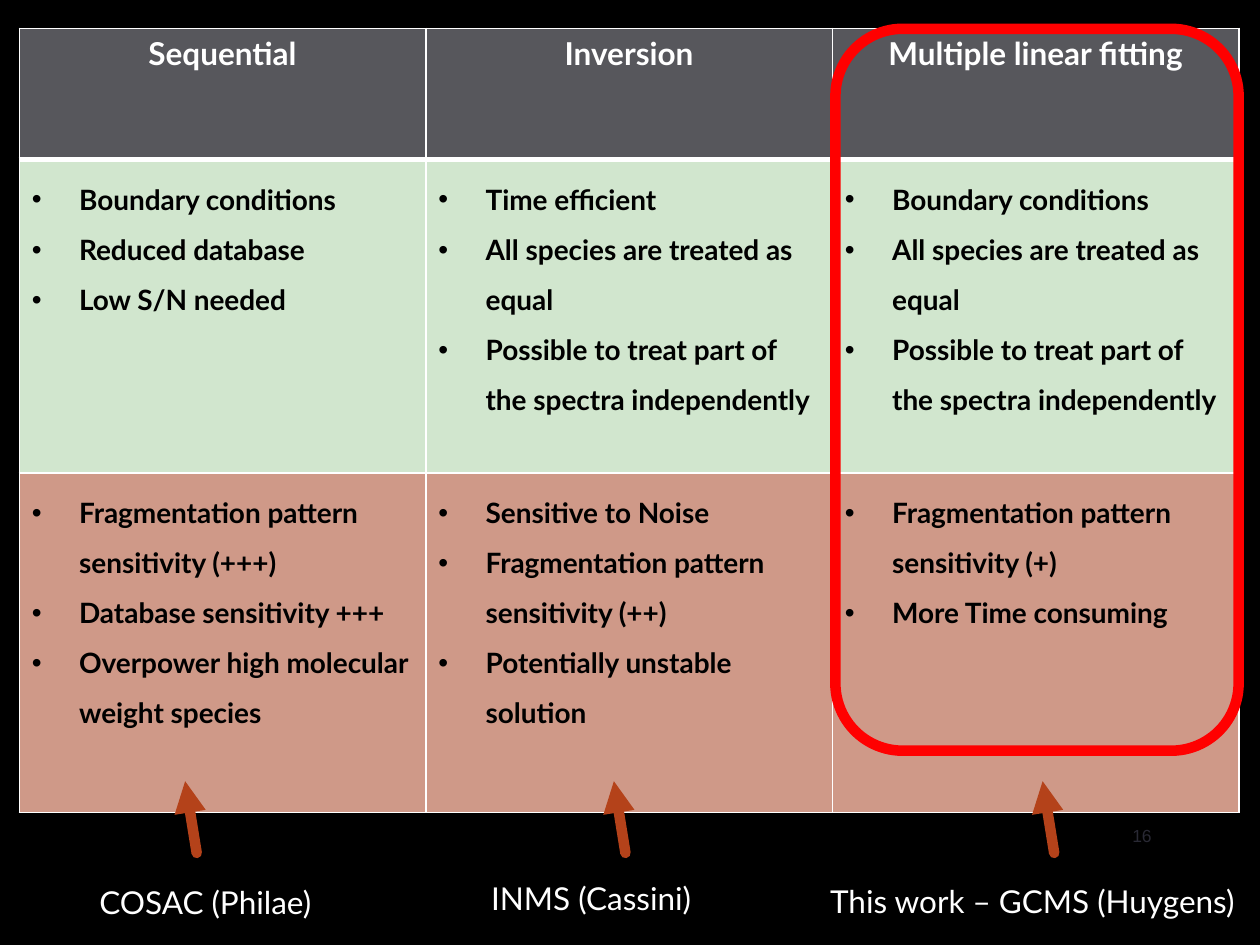
from dataclasses import dataclass
from typing import Any

from lxml import etree
from pptx import Presentation
from pptx.dml import color as c
from pptx.enum import shapes, text
from pptx.oxml import ns
from pptx.util import Pt

WHITE, BLACK, RED, RUST = "FFFFFF", "000000", "FF0000", "B4421A"
HEADER, BENEFIT, DRAWBACK, GREY = "57575C", "D1E6CE", "CF9988", "292934"
TABLE_LEFT, TABLE_TOP, COLUMN_WIDTH = 11, 16.2, 232.3
ROW_HEIGHTS = (75, 179, 194)
ARROW_LEFT, ARROW_STEP, ARROW_TIP, ARROW_END = 105.8, 245, 446.4, 487.4
ARROW_SLANT = 6.6
BULLET_INDENT = 27


@dataclass
class Method:
    name: str
    benefits: list[str]
    drawbacks: list[str]


@dataclass
class Label:
    content: str
    left: float
    top: float
    width: float
    height: float = 29
    size: float = 18
    font: str = "Lato"
    color: str = WHITE
    wrap: bool = False
    alignment: Any = text.PP_ALIGN.LEFT
    anchor: Any = text.MSO_ANCHOR.TOP


TREATMENT = [
    "All species are treated as equal",
    "Possible to treat part of the spectra independently",
]
METHODS = [
    Method(
        "Sequential",
        ["Boundary conditions", "Reduced database", "Low S/N needed"],
        [
            "Fragmentation pattern sensitivity (+++)",
            "Database sensitivity +++",
            "Overpower high molecular weight species",
        ],
    ),
    Method(
        "Inversion",
        ["Time efficient", *TREATMENT],
        [
            "Sensitive to Noise",
            "Fragmentation pattern sensitivity (++)",
            "Potentially unstable solution",
        ],
    ),
    Method(
        "Multiple linear fitting",
        ["Boundary conditions", *TREATMENT],
        ["Fragmentation pattern sensitivity (+)", "More Time consuming"],
    ),
]
LABELS = [
    Label("COSAC (Philae)", 49.7, 501.1, 144),
    Label("INMS (Cassini)", 273.6, 498.6, 136),
    Label("This work – GCMS (Huygens)", 467.3, 500.4, 250),
    Label("16", 620.6, 463, 44.6, size=10, font="Arial", color=GREY, wrap=True,
          alignment=text.PP_ALIGN.RIGHT, anchor=text.MSO_ANCHOR.MIDDLE),
]


def rgb(value: str) -> c.RGBColor:
    return c.RGBColor.from_string(value)


def apply(target: Any, values: dict[str, Any]) -> None:
    for name, value in values.items():
        setattr(target, name, value)


def add_child(parent: Any, tag: str, **attributes: str) -> Any:
    return etree.SubElement(parent, ns.qn(tag), attributes)


def write(paragraph: Any, content: str, size: float, font: str, color: str,
          bold: bool = False) -> None:
    run = paragraph.add_run()
    run.text = content
    apply(run.font, {"size": Pt(size), "name": font, "bold": bold})
    run.font.color.rgb = rgb(color)


def add_bullet(paragraph: Any) -> None:
    properties = paragraph._p.get_or_add_pPr()
    properties.set("marL", str(Pt(BULLET_INDENT)))
    properties.set("indent", str(-Pt(BULLET_INDENT)))
    add_child(properties, "a:buFont", typeface="Arial")
    add_child(properties, "a:buChar", char="•")


def add_borders(cell: Any, top: float, bottom: float) -> None:
    properties = cell._tc.get_or_add_tcPr()
    widths = {"a:lnL": 1, "a:lnR": 1, "a:lnT": top, "a:lnB": bottom}
    for index, (tag, width) in enumerate(widths.items()):
        line = add_child(properties, tag, w=str(Pt(width)))
        add_child(add_child(line, "a:solidFill"), "a:srgbClr", val=WHITE)
        properties.insert(index, line)


def fill_cell(cell: Any, lines: list[str], fill: str, row: int) -> None:
    cell.fill.solid()
    cell.fill.fore_color.rgb = rgb(fill)
    add_borders(cell, 3 if row == 1 else 1, 3 if row == 0 else 1)
    frame = cell.text_frame
    for index, content in enumerate(lines):
        paragraph = frame.add_paragraph() if index else frame.paragraphs[0]
        if row == 0:
            paragraph.alignment = text.PP_ALIGN.CENTER
            write(paragraph, content, 18, "Lato", WHITE, True)
        else:
            paragraph.line_spacing = 1.5
            add_bullet(paragraph)
            write(paragraph, content, 16, "Lato", BLACK, True)


def add_comparison(slide: Any) -> None:
    table = slide.shapes.add_table(
        len(ROW_HEIGHTS), len(METHODS), Pt(TABLE_LEFT), Pt(TABLE_TOP),
        Pt(COLUMN_WIDTH * len(METHODS)), Pt(sum(ROW_HEIGHTS))).table
    for row, height in zip(table.rows, ROW_HEIGHTS):
        row.height = Pt(height)
    for column, method in enumerate(METHODS):
        table.columns[column].width = Pt(COLUMN_WIDTH)
        sections = [([method.name], HEADER), (method.benefits, BENEFIT),
                    (method.drawbacks, DRAWBACK)]
        for row, (lines, fill) in enumerate(sections):
            fill_cell(table.cell(row, column), lines, fill, row)


def add_highlight(slide: Any) -> None:
    shape = slide.shapes.add_shape(
        shapes.MSO_SHAPE.ROUNDED_RECTANGLE, Pt(477.4), Pt(16.5), Pt(230.4), Pt(412.5))
    shape.shadow.inherit = False
    shape.fill.background()
    shape.line.color.rgb = rgb(RED)
    shape.line.width = Pt(6)


def add_arrow(slide: Any, tip: float) -> None:
    arrow = slide.shapes.add_connector(
        shapes.MSO_CONNECTOR.STRAIGHT, Pt(tip + ARROW_SLANT), Pt(ARROW_END),
        Pt(tip), Pt(ARROW_TIP))
    arrow.line.color.rgb = rgb(RUST)
    arrow.line.width = Pt(6)
    line = arrow.line._get_or_add_ln()
    line.set("cap", "rnd")
    add_child(line, "a:tailEnd", type="triangle")
    add_child(arrow._element.spPr, "a:effectLst")


def add_label(slide: Any, label: Label) -> None:
    box = slide.shapes.add_textbox(
        Pt(label.left), Pt(label.top), Pt(label.width), Pt(label.height))
    frame = box.text_frame
    apply(frame, {"word_wrap": label.wrap, "vertical_anchor": label.anchor})
    if not label.wrap:
        frame.auto_size = text.MSO_AUTO_SIZE.SHAPE_TO_FIT_TEXT
    paragraph = frame.paragraphs[0]
    paragraph.alignment = label.alignment
    write(paragraph, label.content, label.size, label.font, label.color)


def main() -> None:
    presentation = Presentation()
    apply(presentation, {"slide_width": Pt(720), "slide_height": Pt(540)})
    slide = presentation.slides.add_slide(presentation.slide_layouts[6])
    slide.background.fill.solid()
    slide.background.fill.fore_color.rgb = rgb(BLACK)
    add_comparison(slide)
    add_highlight(slide)
    for index in range(len(METHODS)):
        add_arrow(slide, ARROW_LEFT + index * ARROW_STEP)
    for label in LABELS:
        add_label(slide, label)
    presentation.save("out.pptx")


if __name__ == "__main__":
    main()
